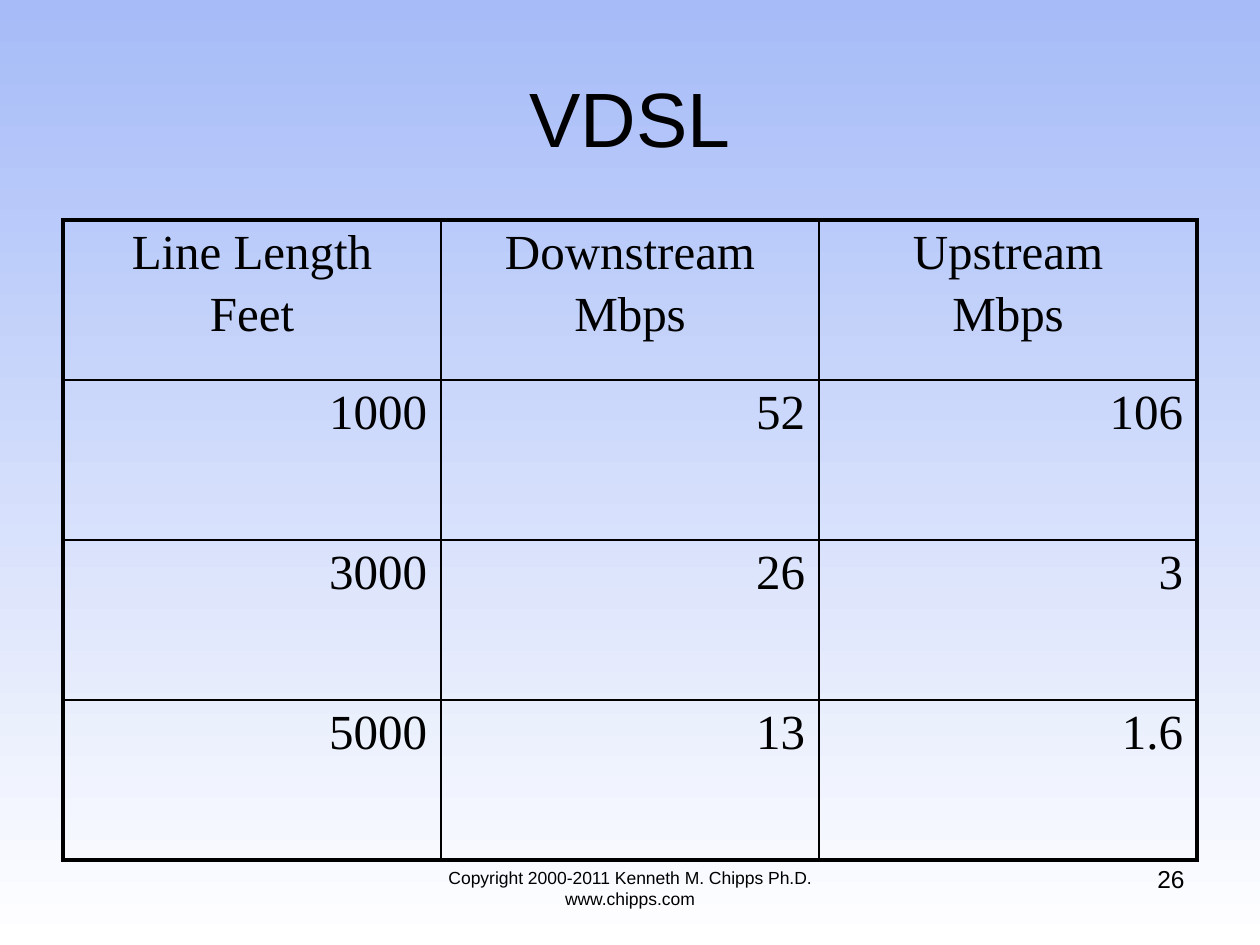
import pptx
import pptx.dml.color
import pptx.enum.text
import pptx.oxml.ns
import pptx.util
from lxml import etree

SCALE = 914400 / 126  # EMU per px
BLACK = pptx.dml.color.RGBColor(0x00, 0x00, 0x00)
SKY = pptx.dml.color.RGBColor(0xA6, 0xBB, 0xF8)
WHITE = pptx.dml.color.RGBColor(0xFF, 0xFF, 0xFF)
CENTER = pptx.enum.text.PP_ALIGN.CENTER
RIGHT = pptx.enum.text.PP_ALIGN.RIGHT
THICK, THIN = 2.25, 1

ROWS = [
    ["Line Length\nFeet", "Downstream\nMbps", "Upstream\nMbps"],
    ["1000", "52", "106"],
    ["3000", "26", "3"],
    ["5000", "13", "1.6"],
]


def px(length):
    return pptx.util.Emu(round(length * SCALE))


class SlideBuilder:
    heading_font = "Arial"
    table_font = "Times New Roman"

    def __init__(self, presentation):
        self.slide = presentation.slides.add_slide(presentation.slide_layouts[5])

    def background(self, top_color, bottom_color):
        fill = self.slide.background.fill
        fill.gradient()
        fill.gradient_angle = 270
        for stop, color in zip(fill.gradient_stops, (top_color, bottom_color)):
            stop.color.rgb = color

    def format_text(self, text_frame, size, font, alignment, space_before=0):
        for index, paragraph in enumerate(text_frame.paragraphs):
            paragraph.alignment = alignment
            if index:
                paragraph.space_before = pptx.util.Pt(space_before)
            for run in paragraph.runs:
                run.font.size = pptx.util.Pt(size)
                run.font.name = font
                run.font.color.rgb = BLACK

    def title(self, text, left, top, width, height):
        shape = self.slide.shapes.title
        shape.left, shape.top = px(left), px(top)
        shape.width, shape.height = px(width), px(height)
        shape.text_frame.text = text
        shape.text_frame.vertical_anchor = pptx.enum.text.MSO_ANCHOR.MIDDLE
        self.format_text(shape.text_frame, 44, self.heading_font, CENTER)

    def text(self, text, left, top, width, height, size, alignment):
        shape = self.slide.shapes.add_textbox(px(left), px(top), px(width), px(height))
        shape.text_frame.word_wrap = True
        shape.text_frame.text = text
        self.format_text(shape.text_frame, size, self.heading_font, alignment)

    def border(self, cell, side, width):
        properties = cell._tc.get_or_add_tcPr()
        line = etree.SubElement(properties, pptx.oxml.ns.qn("a:ln" + side),
                                w=str(pptx.util.Pt(width)))
        fill = etree.SubElement(line, pptx.oxml.ns.qn("a:solidFill"))
        etree.SubElement(fill, pptx.oxml.ns.qn("a:srgbClr"), val=str(BLACK))

    def table(self, rows, left, top, width, height):
        last_row, last_column = len(rows) - 1, len(rows[0]) - 1
        table = self.slide.shapes.add_table(
            len(rows), len(rows[0]), px(left), px(top), px(width), px(height)).table
        table.first_row = table.horz_banding = False
        for r, values in enumerate(rows):
            for c, value in enumerate(values):
                cell = table.cell(r, c)
                cell.text_frame.text = value
                cell.margin_left = cell.margin_right = px(14)
                cell.margin_top = cell.margin_bottom = px(6)
                self.format_text(cell.text_frame, 28, self.table_font,
                                 RIGHT if r else CENTER, 4.5)
                # Heavy frame outside, fine lines inside
                outer_sides = {"L": c == 0, "R": c == last_column,
                               "T": r == 0, "B": r == last_row}
                for side, is_outer in outer_sides.items():
                    self.border(cell, side, THICK if is_outer else THIN)
                cell.fill.background()


def main():
    presentation = pptx.Presentation()
    presentation.slide_width, presentation.slide_height = px(1260), px(945)
    builder = SlideBuilder(presentation)
    builder.background(SKY, WHITE)
    builder.title("VDSL", 63, 38, 1134, 158)

    # Line speeds by distance
    builder.table(ROWS, 63, 220, 1134, 640)

    # Footer and slide number
    builder.text("Copyright 2000-2011 Kenneth M. Chipps Ph.D. www.chipps.com",
                 378, 861, 504, 66, 10, CENTER)
    builder.text("26", 903, 858, 294, 66, 14, RIGHT)
    presentation.save("out.pptx")


if __name__ == "__main__":
    main()
